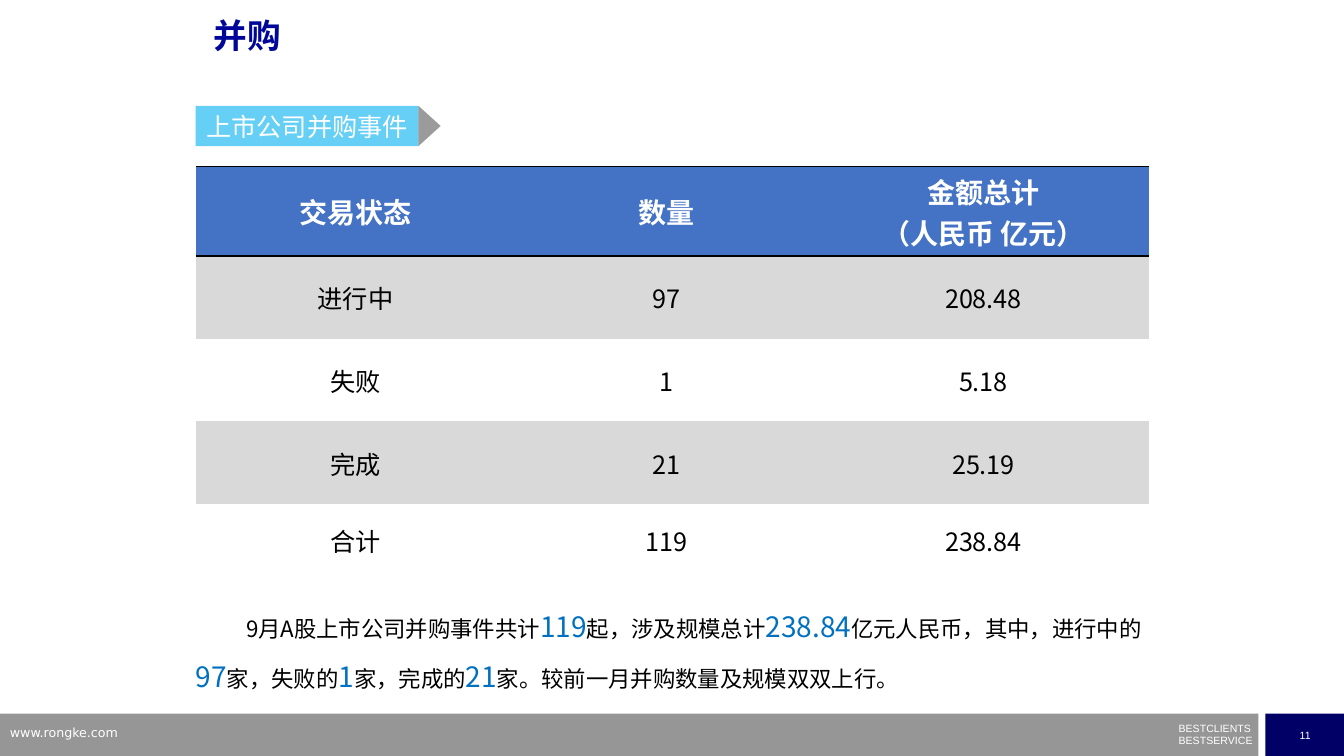
from lxml import etree
from pptx import Presentation
from pptx.dml.color import RGBColor
from pptx.enum import shapes, text
from pptx.oxml import ns
from pptx.util import Inches, Pt

WHITE = RGBColor(0xFF, 0xFF, 0xFF)
BLACK = RGBColor(0, 0, 0)
FOOTER_GREY = RGBColor(0x96, 0x96, 0x96)
PAGE_NAVY = RGBColor(0, 0, 0x66)
TITLE_BLUE = RGBColor(0, 0x07, 0x98)
TAG_BLUE = RGBColor(0, 0xB0, 0xF0)
TAG_GREY = RGBColor(0x59, 0x59, 0x59)
HEADER_BLUE = RGBColor(0x44, 0x72, 0xC4)
BAND_GREY = RGBColor(0xD9, 0xD9, 0xD9)
FIGURE_BLUE = RGBColor(0, 0x70, 0xC0)
CJK = "Noto Sans CJK SC"
NO_STYLE = "{2D5ABB26-0587-4C30-8999-92F81FD0307C}"


def style(paragraph, size, color, name, bold=False):
    font = paragraph.font
    font.size, font.name, font.bold = Pt(size), name, bold
    font.color.rgb = color


def add_block(parent, kind, left, top, width, height, color, opacity=100):
    """Add a borderless filled shape; opacity is in percent."""
    block = parent.shapes.add_shape(
        kind, Inches(left), Inches(top), Inches(width), Inches(height))
    block.shadow.inherit = False
    block.line.fill.background()
    block.fill.solid()
    block.fill.fore_color.rgb = color
    if opacity < 100:
        rgb = block.element.spPr.find(".//" + ns.qn("a:srgbClr"))
        etree.SubElement(rgb, ns.qn("a:alpha"), val=str(opacity * 1000))
    return block


prs = Presentation()
prs.slide_width, prs.slide_height = Inches(13.33), Inches(7.5)
slide = prs.slides.add_slide(prs.slide_layouts[5])
RECT = shapes.MSO_SHAPE.RECTANGLE

# Footer
add_block(slide, RECT, 0, 7.08, 12.48, 0.42, FOOTER_GREY)
page = add_block(slide, RECT, 12.55, 7.08, 0.79, 0.42, PAGE_NAVY).text_frame
page.word_wrap = False
page.text = "11"
page.vertical_anchor = text.MSO_ANCHOR.MIDDLE
page.paragraphs[0].alignment = text.PP_ALIGN.CENTER
style(page.paragraphs[0], 7.5, WHITE, "Arial")

slogan = slide.shapes.add_textbox(
    Inches(11.69), Inches(7.22), Inches(0.76), Inches(0.2)).text_frame
slogan.margin_left = slogan.margin_right = slogan.margin_top = slogan.margin_bottom = 0
slogan.word_wrap = True
slogan.text = "BESTCLIENTS\nBESTSERVICE"
for line in slogan.paragraphs:
    line.line_spacing = 0.5
    style(line, 7.5, WHITE, "Arial")
slogan.paragraphs[1].space_before = Pt(4)

website = slide.shapes.add_textbox(
    Inches(0), Inches(7.14), Inches(3.2), Inches(0.26)).text_frame
website.word_wrap = True
website.text = "www.rongke.com"
style(website.paragraphs[0], 9, WHITE, "DejaVu Sans")

# Title
title = slide.shapes.title
title.left, title.top = Inches(2.02), Inches(0.14)
title.width, title.height = Inches(9), Inches(0.7)
heading = title.text_frame
heading.text = "并购"
heading.auto_size = text.MSO_AUTO_SIZE.NONE
heading.vertical_anchor = text.MSO_ANCHOR.TOP
heading.paragraphs[0].alignment = text.PP_ALIGN.LEFT
heading.paragraphs[0].line_spacing = 0.9
style(heading.paragraphs[0], 24, TITLE_BLUE, "Arial", bold=True)

# Section tag with its arrow tip
section = slide.shapes.add_group_shape()
tag = add_block(section, RECT, 1.94, 1.05, 2.21, 0.4, TAG_BLUE, 60).text_frame
tag.text = "上市公司并购事件"
tag.word_wrap = True
tag.vertical_anchor = text.MSO_ANCHOR.MIDDLE
tag.paragraphs[0].alignment = text.PP_ALIGN.CENTER
style(tag.paragraphs[0], 18, WHITE, CJK)
tip = add_block(section, shapes.MSO_SHAPE.ISOSCELES_TRIANGLE,
                4.06, 1.14, 0.4, 0.22, TAG_GREY, 60)
tip.rotation = 90

# Deals by status
deals = [
    ("交易状态", "数量", "金额总计\v（人民币 亿元）"),
    ("进行中", "97", "208.48"),
    ("失败", "1", "5.18"),
    ("完成", "21", "25.19"),
    ("合计", "119", "238.84"),
]
table = slide.shapes.add_table(
    5, 3, Inches(1.94), Inches(1.65), Inches(9.45), Inches(4.05)).table
table.first_row = table.horz_banding = False
table._tbl.tblPr.find(ns.qn("a:tableStyleId")).text = NO_STYLE
for column, width in zip(table.columns, (3.17, 3, 3.29)):
    column.width = Inches(width)
for row, height in zip(table.rows, (0.89, 0.82, 0.82, 0.82, 0.71)):
    row.height = Inches(height)

for r, deal in enumerate(deals):
    is_header = r == 0
    for c, value in enumerate(deal):
        cell = table.cell(r, c)
        cell.text = value
        cell.vertical_anchor = text.MSO_ANCHOR.MIDDLE
        cell.margin_left = cell.margin_right = cell.margin_top = Inches(0.01)
        cell.margin_bottom = 0
        cell.fill.solid()
        cell.fill.fore_color.rgb = (
            HEADER_BLUE if is_header else BAND_GREY if r % 2 else WHITE)
        entry = cell.text_frame.paragraphs[0]
        entry.alignment = text.PP_ALIGN.CENTER
        style(entry, 20 if is_header else 18,
              WHITE if is_header else BLACK, CJK, bold=is_header)
        if is_header:
            for position, edge in enumerate(("a:lnT", "a:lnB")):
                border = etree.Element(ns.qn(edge), w=str(Pt(1)))
                fill = etree.SubElement(border, ns.qn("a:solidFill"))
                etree.SubElement(fill, ns.qn("a:srgbClr"), val=str(BLACK))
                cell._tc.get_or_add_tcPr().insert(position, border)

# Summary: wording and figures alternate
summary_parts = [
    "9月A股上市公司并购事件共计", "119", "起，涉及规模总计", "238.84",
    "亿元人民币，其中，进行中的", "97", "家，失败的", "1",
    "家，完成的", "21", "家。较前一月并购数量及规模双双上行。",
]
summary = slide.shapes.add_textbox(
    Inches(1.94), Inches(5.88), Inches(9.45), Inches(0.95)).text_frame
summary.margin_left = summary.margin_right = summary.margin_top = summary.margin_bottom = 0
summary.word_wrap = True
sentence = summary.paragraphs[0]
sentence.line_spacing = 1.5
sentence._p.get_or_add_pPr().set("indent", str(Inches(0.5)))
style(sentence, 16, BLACK, CJK)
for i, part in enumerate(summary_parts):
    run = sentence.add_run()
    run.text = part
    if i % 2:
        run.font.size = Pt(20)
        run.font.color.rgb = FIGURE_BLUE

prs.save("out.pptx")
